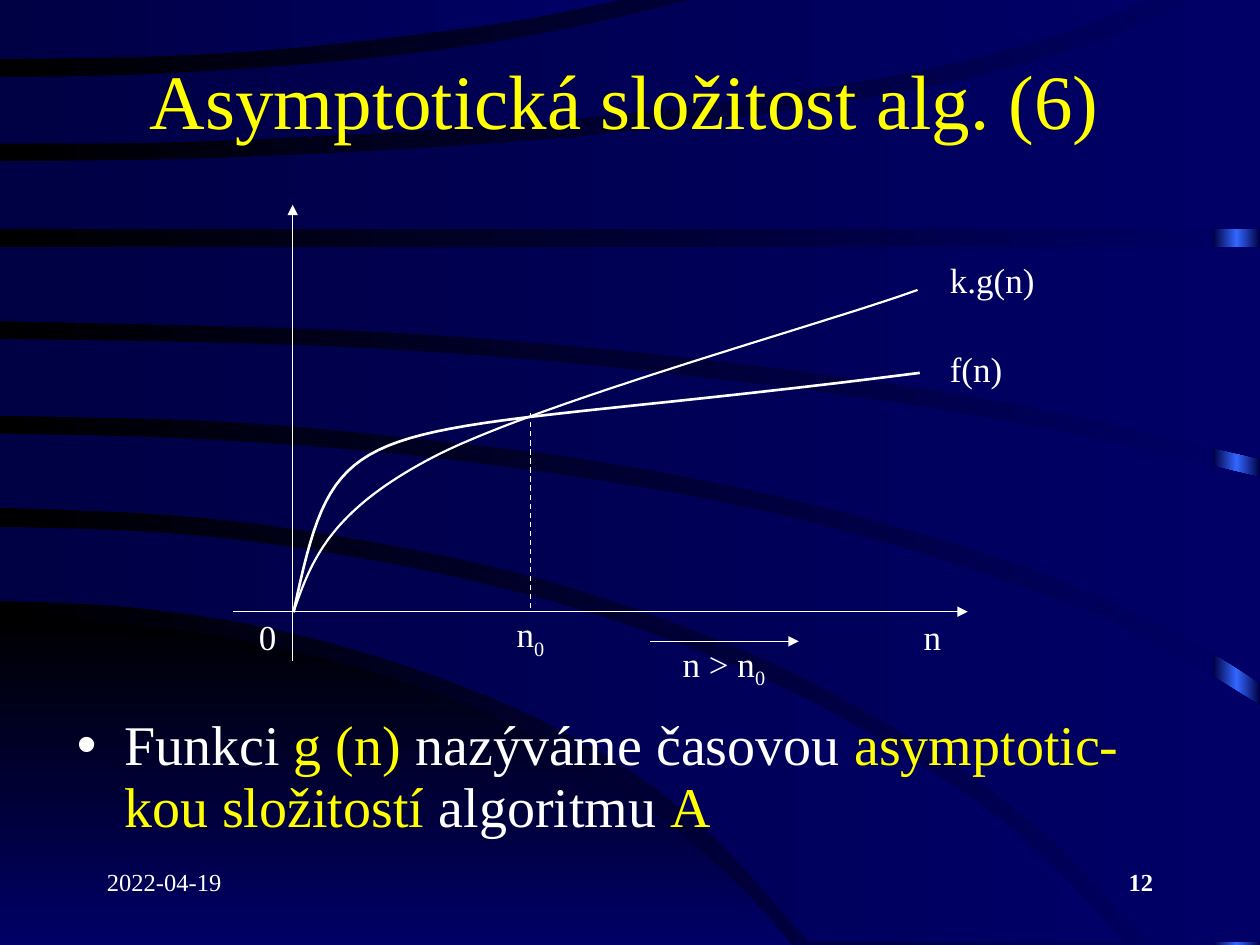
from copy import deepcopy
from dataclasses import dataclass
from typing import NamedTuple

from lxml import etree
from pptx import Presentation
from pptx import util as u
from pptx.dml.color import RGBColor
from pptx.enum import dml, shapes, text
from pptx.oxml.ns import qn

CELL = u.Inches(0.1)
COLS, ROWS = 100, 75
AXIS_ROW, AXIS_COL = 48.55, 23.23
Point = tuple[float, float]


@dataclass(frozen=True)
class Theme:
    font: str = "Times New Roman"
    white: str = "FFFFFF"
    yellow: str = "FFFF00"
    black: str = "000000"
    navy: str = "000044"
    blue: str = "000066"
    glow: str = "3366FF"
    title: int = 44
    body: int = 32
    label: int = 20
    footer: int = 14
    thin: float = 0.75


class Band(NamedTuple):
    top: list[Point]
    bottom: list[Point]
    corners: list[Point] = []


class Curve(NamedTuple):
    points: list[Point]
    width: float


class Label(NamedTuple):
    words: str
    box: tuple[float, float, float, float]
    sub: str = ""
    align: str = "CENTER"


class Line(NamedTuple):
    start: Point
    end: Point
    arrow: bool = True
    target: str = ""


T = Theme()

DOME = Band([(0, 49.1), (11.2, 49.7), (21.8, 51.4), (32.7, 54.4), (42.5, 58.6),
             (52.8, 65.1), (59.6, 71.3), (62.8, 75)], [(0, 75)])
BANDS = [
    Band([(0, 41.8), (13, 42.3), (24.9, 43.7), (38.2, 46.3), (51.5, 50.2), (64.4, 55.7),
          (76.6, 63), (83.3, 68.5), (89.3, 74.8)],
         [(0, 47.7), (10.5, 48.2), (22.1, 50), (34.2, 53.5), (45.4, 58.4), (55.3, 65.1),
          (64.2, 74.8)]),
    Band([(0, 34.4), (14.4, 34.8), (28.9, 35.8), (42.6, 37.4), (57, 39.8), (69.3, 42.8),
          (81.8, 46.8), (90.4, 50.3), (100, 56)],
         [(0, 40.3), (14, 40.9), (26.7, 42.5), (40.5, 45.3), (52.1, 48.9), (63.6, 53.7),
          (75.6, 60.6), (83.8, 67), (90.9, 74.8)], [(100, 74.8)]),
    Band([(0, 26.9), (16.8, 27.2), (30.1, 27.7), (43.8, 28.7), (56.6, 30.1), (71.4, 32),
          (85.9, 34.6), (100, 37.9)],
         [(0, 33), (16.7, 33.4), (30.3, 34.5), (46.2, 36.4), (61, 39.2), (74.3, 42.7),
          (85.3, 46.5), (95.1, 51.2), (100, 54.2)]),
    Band([(0, 19.6), (100, 19.6)],
         [(0, 25.5), (18.6, 25.9), (33.2, 26.5), (50.2, 27.9), (66.2, 29.8), (81.3, 32.2),
          (100, 36.4)]),
    Band([(0, 12.8), (15.7, 12.6), (32.9, 11.8), (46.5, 10.8), (59.7, 9.2), (73.4, 7),
          (83.5, 4.4), (89.2, 2.5), (94, 0)], [(0, 18.2), (100, 18.2)], [(100, 0)]),
    Band([(0, 6.1), (12.1, 5.9), (26.7, 4.9), (38.3, 3.5), (48.2, 1.6), (54.8, 0)],
         [(0, 11.4), (12.6, 11.3), (27, 10.7), (42.5, 9.7), (57.7, 8), (71.5, 5.9),
          (83, 3.1), (91.2, 0)]),
    Band([(0, 0), (49.1, 0)],
         [(0, 4.7), (13.7, 4.4), (25.3, 3.6), (39.9, 1.8), (49.1, 0)]),
]
K_G = [(23.3, 48.5), (24.7, 44.5), (26.1, 40.6), (34.3, 36.3), (42.5, 32), (66, 25.5), (72.8, 23)]
CURVES = [
    Curve([(23.3, 48.6), (27, 31.3), (27.6, 35.4), (73, 29.6)], 1.5),
    Curve([(x + 0.04, y + 0.04) for x, y in K_G], T.thin),
    Curve(K_G, 1),
]
LABELS = [
    Label("0", (19.3, AXIS_ROW, 3.9, 3.9)),
    Label("n", (72.05, AXIS_ROW, 3.9, 3.9)),
    Label("k.g(n)", (74.4, 20.2, 8.7, 3.9), align="LEFT"),
    Label("f(n)", (74.4, 27.3, 8.7, 3.9), align="LEFT"),
    Label("n", (39.75, AXIS_ROW, 4.7, 3.9), sub="0"),
    Label("n > n", (52.35, 50.9, 10.2, 3.9), sub="0"),
]
LINES = [
    Line((AXIS_COL, 52.45), (AXIS_COL, 16.25)),
    Line((18.5, AXIS_ROW), (76.8, AXIS_ROW)),
    Line((42.1, 32.8), (42.1, AXIS_ROW), arrow=False, target="n0"),
    Line((51.6, 50.9), (63.4, 50.9)),
]


def cells(*values: float) -> list[int]:
    return [u.Emu(round(v * CELL)) for v in values]


def bezier(a: Point, b: Point, c: Point, d: Point, steps: int) -> list[Point]:
    ts = [i / steps for i in range(1, steps + 1)]
    return [tuple((1 - t) ** 3 * p + 3 * t * (1 - t) ** 2 * q + 3 * t * t * (1 - t) * v + t ** 3 * w
                  for p, q, v, w in zip(a, b, c, d)) for t in ts]


def spline(pts: list[Point]) -> list[Point]:
    ext = [pts[0], *pts, pts[-1]]
    out = [pts[0]]
    for a, b, c, d in zip(ext, ext[1:], ext[2:], ext[3:]):
        near = tuple(q + (v - p) / 6 for p, q, v in zip(a, b, c))
        far = tuple(v - (w - q) / 6 for q, v, w in zip(b, c, d))
        out += bezier(b, near, far, c, 5)
    return out


def outline(s, pts: list[Point], close: bool):
    xy = [cells(*p) for p in pts]
    fb = s.shapes.build_freeform(*xy[0])
    fb.add_line_segments(xy[1:], close=close)
    sp = fb.convert_to_shape()
    sp.shadow.inherit = False
    return sp


def gradient(fill, first: str, last: str, angle: int = 0) -> None:
    fill.gradient()
    fill.gradient_angle = angle
    for stop, color in zip(fill.gradient_stops, (first, last)):
        stop.color.rgb = RGBColor.from_string(color)


def draw_band(s, band: Band, first: str, last: str, angle: int = 0) -> None:
    sp = outline(s, spline(band.top) + band.corners + spline(band.bottom)[::-1], True)
    gradient(sp.fill, first, last, angle)
    sp.line.fill.background()


def draw_strip(s) -> None:
    sp = s.shapes.add_shape(shapes.MSO_SHAPE.RECTANGLE, *cells(COLS - 3.7, 0, 3.7, ROWS))
    sp.shadow.inherit = False
    sp.line.fill.background()
    gradient(sp.fill, T.navy, T.navy)
    gs = sp._element.spPr.find(".//" + qn("a:gs"))
    gs.addnext(deepcopy(gs))
    middle = sp.fill.gradient_stops[1]
    middle.position = 0.5
    middle.color.rgb = RGBColor.from_string(T.glow)


def stroke(line, width: float) -> None:
    line.color.rgb = RGBColor.from_string(T.white)
    line.width = u.Pt(width)


def draw_curve(s, curve: Curve) -> None:
    pts = curve.points[:1]
    for i in range(0, len(curve.points) - 1, 3):
        pts = pts + bezier(*curve.points[i:i + 4], 40)
    sp = outline(s, pts, False)
    sp.fill.background()
    stroke(sp.line, curve.width)


def write(p, words: str, *, size: int, color: str = T.white, bold: bool = False, base: int = 0) -> None:
    r = p.add_run()
    r.text = words
    r.font.name, r.font.size, r.font.bold = T.font, u.Pt(size), bold
    r.font.color.rgb = RGBColor.from_string(color)
    if base:
        r._r.get_or_add_rPr().set("baseline", str(base * 1000))


def text_box(s, box, align: str = "LEFT", wrap: bool = True, anchor: str = "TOP"):
    sp = s.shapes.add_textbox(*cells(*box))
    tf = sp.text_frame
    tf.word_wrap = wrap
    tf.vertical_anchor = text.MSO_ANCHOR[anchor]
    tf.paragraphs[0].alignment = text.PP_ALIGN[align]
    return sp, tf.paragraphs[0]


def draw_label(s, label: Label):
    sp, p = text_box(s, label.box, label.align, wrap=False, anchor="MIDDLE")
    write(p, label.words, size=T.label)
    if label.sub:
        write(p, label.sub, size=T.label, base=-25)
    return sp


def draw_line(s, line: Line, targets: dict) -> None:
    sp = s.shapes.add_connector(shapes.MSO_CONNECTOR.STRAIGHT, *cells(*line.start, *line.end))
    stroke(sp.line, T.thin)
    if line.arrow:
        etree.SubElement(sp.line._get_or_add_ln(), qn("a:tailEnd"), type="triangle")
    else:
        sp.line.dash_style = dml.MSO_LINE.DASH
    etree.SubElement(sp._element.spPr, qn("a:effectLst"))
    if line.target:
        sp.end_connect(targets[line.target], 0)


def place(s, sp, box, anchor: str):
    s.shapes._spTree.append(sp._element)
    sp.left, sp.top, sp.width, sp.height = cells(*box)
    tf = sp.text_frame
    tf.auto_size = text.MSO_AUTO_SIZE.NONE
    tf.vertical_anchor = text.MSO_ANCHOR[anchor]
    return tf.paragraphs[0]


def main() -> None:
    prs = Presentation()
    prs.slide_width, prs.slide_height = cells(COLS, ROWS)
    s = prs.slides.add_slide(prs.slide_layouts[1])
    title, body = s.shapes.title, s.placeholders[1]
    gradient(s.background.fill, T.black, T.blue)
    draw_strip(s)
    draw_band(s, DOME, T.black, T.blue, 270)
    for band in BANDS:
        draw_band(s, band, T.navy, T.blue)

    p = place(s, title, (7.5, 3.4, 84.2, 8.9), "MIDDLE")
    p.alignment = text.PP_ALIGN.CENTER
    write(p, "Asymptotická složitost alg. (6)", size=T.title, color=T.yellow)
    p = place(s, body, (5.1, 56.4, 89.2, 11), "TOP")
    p.line_spacing = 0.91
    for words, color in [("Funkci ", T.white), ("g (n)", T.yellow), (" nazýváme časovou ", T.white),
                         ("asymptotic-kou složitostí", T.yellow), (" algoritmu ", T.white),
                         ("A", T.yellow)]:
        write(p, words, size=T.body, color=color)

    for curve in CURVES:
        draw_curve(s, curve)
    targets = {label.words + label.sub: draw_label(s, label) for label in LABELS}
    for line in LINES:
        draw_line(s, line, targets)
    for words, col, align, bold in [("2022-04-19", 7.5, "LEFT", False), ("12", 71.7, "RIGHT", True)]:
        _, p = text_box(s, (col, 68.3, 20.8, 5), align)
        write(p, words, size=T.footer, bold=bold)
    prs.save("out.pptx")


if __name__ == "__main__":
    main()
